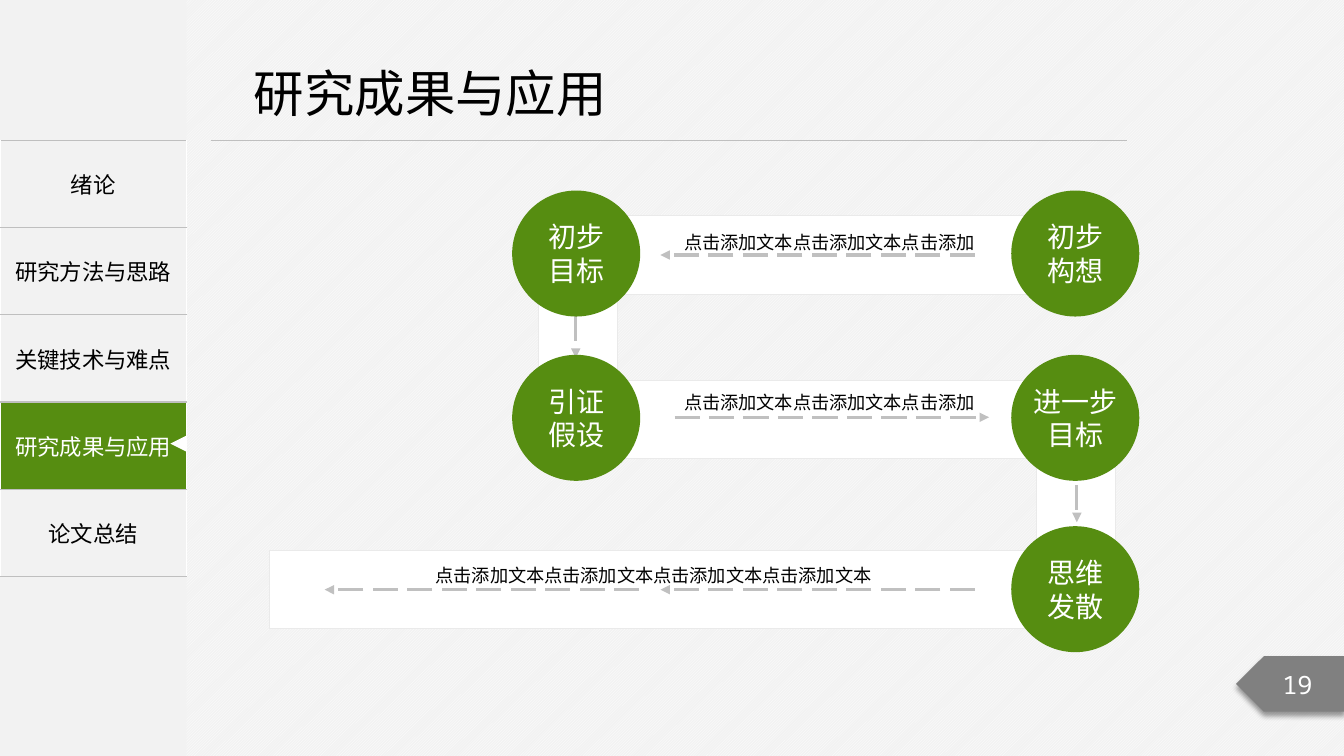
from dataclasses import dataclass

from lxml.etree import SubElement
from pptx import Presentation
from pptx.dml.color import RGBColor
from pptx.enum.dml import MSO_LINE, MSO_PATTERN
from pptx.enum.shapes import MSO_CONNECTOR, MSO_SHAPE
from pptx.enum.text import MSO_ANCHOR, MSO_AUTO_SIZE, PP_ALIGN
from pptx.oxml.ns import qn
from pptx.util import Inches, Pt


@dataclass(frozen=True)
class Theme:
    green: str = "568D11"
    panel: str = "F2F2F2"
    white: str = "FFFFFF"
    ink: str = "000000"
    rule: str = "BFBFBF"
    arrow: str = "C0C0C0"
    edge: str = "EAEAEA"
    tag: str = "808080"
    chinese: str = "Noto Sans CJK SC"
    latin: str = "Calibri"
    digits: str = "Noto Sans Mono"
    title: int = 36
    circle: int = 20
    number: int = 18
    menu: int = 16
    label: int = 13


@dataclass(frozen=True)
class Box:
    left: float
    top: float
    width: float
    height: float

    def inches(self):
        return [Inches(n) for n in (self.left, self.top, self.width, self.height)]


THEME = Theme()
MENU = ["绪论", "研究方法与思路", "关键技术与难点", "研究成果与应用", "论文总结"]
ACTIVE = 3
PHRASE = "点击添加文本"


def color(code):
    return RGBColor.from_string(code)


def write(frame, text, size, ink, font=THEME.chinese, align=PP_ALIGN.CENTER, spacing=None):
    """Fill a text frame, one paragraph a line."""
    frame.text = text
    for para in frame.paragraphs:
        para.alignment = align
        para.line_spacing = spacing
        para.font.size = Pt(size)
        para.font.name = font
        para.font.color.rgb = color(ink)
        properties = para._p.get_or_add_pPr().find(qn("a:defRPr"))
        SubElement(properties, qn("a:ea"), typeface=THEME.chinese)


def add_block(page, kind, box, fill, edge=None):
    shape = page.shapes.add_shape(kind, *box.inches())
    shape.shadow.inherit = False
    shape.fill.solid()
    shape.fill.fore_color.rgb = color(fill)
    if edge:
        shape.line.color.rgb = color(edge)
        shape.line.width = Pt(0.75)
    else:
        shape.line.fill.background()
    return shape


def add_line(page, start, end, ink, width):
    line = page.shapes.add_connector(
        MSO_CONNECTOR.STRAIGHT, *[Inches(n) for n in (*start, *end)])
    line.line.color.rgb = color(ink)
    line.line.width = Pt(width)
    SubElement(line._element.spPr, qn("a:effectLst"))
    return line


def add_arrow(page, start, end):
    arrow = add_line(page, start, end, THEME.arrow, 2.25)
    arrow.line.dash_style = MSO_LINE.LONG_DASH
    SubElement(arrow.line._get_or_add_ln(), qn("a:tailEnd"), type="triangle")


def add_text(page, box, wrap=True):
    text_box = page.shapes.add_textbox(*box.inches())
    frame = text_box.text_frame
    frame.word_wrap = wrap
    frame.auto_size = MSO_AUTO_SIZE.SHAPE_TO_FIT_TEXT
    return frame


def set_small_margins(frame):
    frame.vertical_anchor = MSO_ANCHOR.MIDDLE
    frame.margin_left = frame.margin_right = Inches(0.08)
    frame.margin_top = frame.margin_bottom = Inches(0.04)


def rule_cell(cell):
    """Draw grey rules above and below a table cell."""
    properties = cell._tc.get_or_add_tcPr()
    for place, side in enumerate(("a:lnT", "a:lnB")):
        border = properties.makeelement(qn(side), {"w": str(Pt(1))})
        fill = SubElement(border, qn("a:solidFill"))
        SubElement(fill, qn("a:srgbClr"), val=THEME.rule)
        properties.insert(place, border)


def add_sidebar(page, box):
    add_block(page, MSO_SHAPE.RECTANGLE, box, THEME.panel)
    menu = Box(box.left, box.top + 1.39, box.width, 4.33)
    table = page.shapes.add_table(len(MENU), 1, *menu.inches()).table
    table.first_row = table.horz_banding = False
    for index, name in enumerate(MENU):
        active = index == ACTIVE
        cell = table.cell(index, 0)
        cell.vertical_anchor = MSO_ANCHOR.MIDDLE
        cell.fill.solid()
        cell.fill.fore_color.rgb = color(THEME.green if active else THEME.panel)
        write(cell.text_frame, name, THEME.menu, THEME.white if active else THEME.ink)
        rule_cell(cell)
    # Marker on the active row
    side = 0.16
    middle = menu.top + menu.height / len(MENU) * (ACTIVE + 0.5)
    marker = add_block(page, MSO_SHAPE.ISOSCELES_TRIANGLE,
                       Box(box.left + box.width - side, middle - side / 2 - 0.02, side, side),
                       THEME.white)
    marker.rotation = 270


def add_heading(page, box):
    bottom = box.top + box.height
    add_line(page, (box.left, bottom), (box.left + box.width, bottom), THEME.rule, 0.5)
    frame = add_text(page, Box(box.left + 0.33, box.top, 3.74, 0.71), wrap=False)
    write(frame, MENU[ACTIVE], THEME.title, THEME.ink, align=PP_ALIGN.LEFT)


def add_page_number(page, box):
    tag = add_block(page, MSO_SHAPE.PENTAGON, box, THEME.tag)
    tag._element.spPr.find(qn("a:xfrm")).set("flipH", "1")
    tag.text_frame.vertical_anchor = MSO_ANCHOR.MIDDLE
    write(tag.text_frame, "19", THEME.number, THEME.white, THEME.digits)
    # Soft shadow straight below
    effects = tag._element.spPr.find(qn("a:effectLst"))
    shadow = SubElement(effects, qn("a:outerShdw"), blurRad=str(Pt(4)),
                        dist=str(Pt(3)), dir="5400000", rotWithShape="0")
    black = SubElement(shadow, qn("a:srgbClr"), val=THEME.ink)
    SubElement(black, qn("a:alpha"), val="40000")


def add_flow(page, box):
    """Snake-shaped flow of five circles inside the box."""
    def at(left, top, width, height):
        return Box(box.left + left, box.top + top, width, height)

    def arrow(start, end):
        add_arrow(page, *[(box.left + x, box.top + y) for x, y in (start, end)])

    # White tracks behind the circles
    for track in (at(0, 3.57, 8.38, 0.78), at(2.97, 1.88, 5.42, 0.78),
                  at(7.61, 2.25, 0.78, 2.14), at(3.41, 0.25, 4.97, 0.78),
                  at(2.67, 0.26, 0.78, 2.4)):
        add_block(page, MSO_SHAPE.RECTANGLE, track, THEME.white, THEME.edge)

    # Arrows along the tracks
    near, far = 3.88, 7
    arrow((far, 0.64), (near, 0.64))
    arrow((3.04, 1.24), (3.04, 1.66))
    arrow((4.02, 2.25), (7.14, 2.25))
    arrow((8.01, 2.92), (8.01, 3.29))
    arrow((far, 3.96), (near, 3.96))
    arrow((3.67, 3.96), (0.55, 3.96))

    # Circles
    left, right = 2.41, 7.36
    for x, y, words in ((right, 0, "初步\n构想"), (left, 0, "初步\n目标"),
                        (left, 1.63, "引证\n假设"), (right, 1.63, "进一步\n目标"),
                        (right, 3.33, "思维\n发散")):
        circle = add_block(page, MSO_SHAPE.OVAL, at(x, y, 1.27, 1.25), THEME.green)
        set_small_margins(circle.text_frame)
        circle.text_frame.word_wrap = False
        write(circle.text_frame, words, THEME.circle, THEME.white, THEME.latin)

    # Labels above the arrows
    short = PHRASE * 2 + "点击添加"
    for place, words in ((at(3.91, 0.25, 3.29, 0.42), short),
                         (at(3.91, 1.84, 3.29, 0.42), short),
                         (at(0.62, 3.55, 6.38, 0.42), PHRASE * 4)):
        frame = add_text(page, place)
        set_small_margins(frame)
        write(frame, words, THEME.label, THEME.ink, spacing=1.5)


def main():
    deck = Presentation()
    deck.slide_width, deck.slide_height = Inches(13.33), Inches(7.5)
    page = deck.slides.add_slide(deck.slide_layouts[6])
    backdrop = page.background.fill
    backdrop.patterned()
    backdrop.pattern = MSO_PATTERN.LIGHT_UPWARD_DIAGONAL
    backdrop.fore_color.rgb = color(THEME.white)
    backdrop.back_color.rgb = color(THEME.panel)

    add_sidebar(page, Box(0, 0, 1.85, 7.5))
    add_heading(page, Box(2.09, 0.57, 9.09, 0.82))
    add_page_number(page, Box(12.26, 6.51, 1.08, 0.55))
    add_flow(page, Box(2.67, 1.89, 8.63, 4.58))
    deck.save("out.pptx")


if __name__ == "__main__":
    main()
